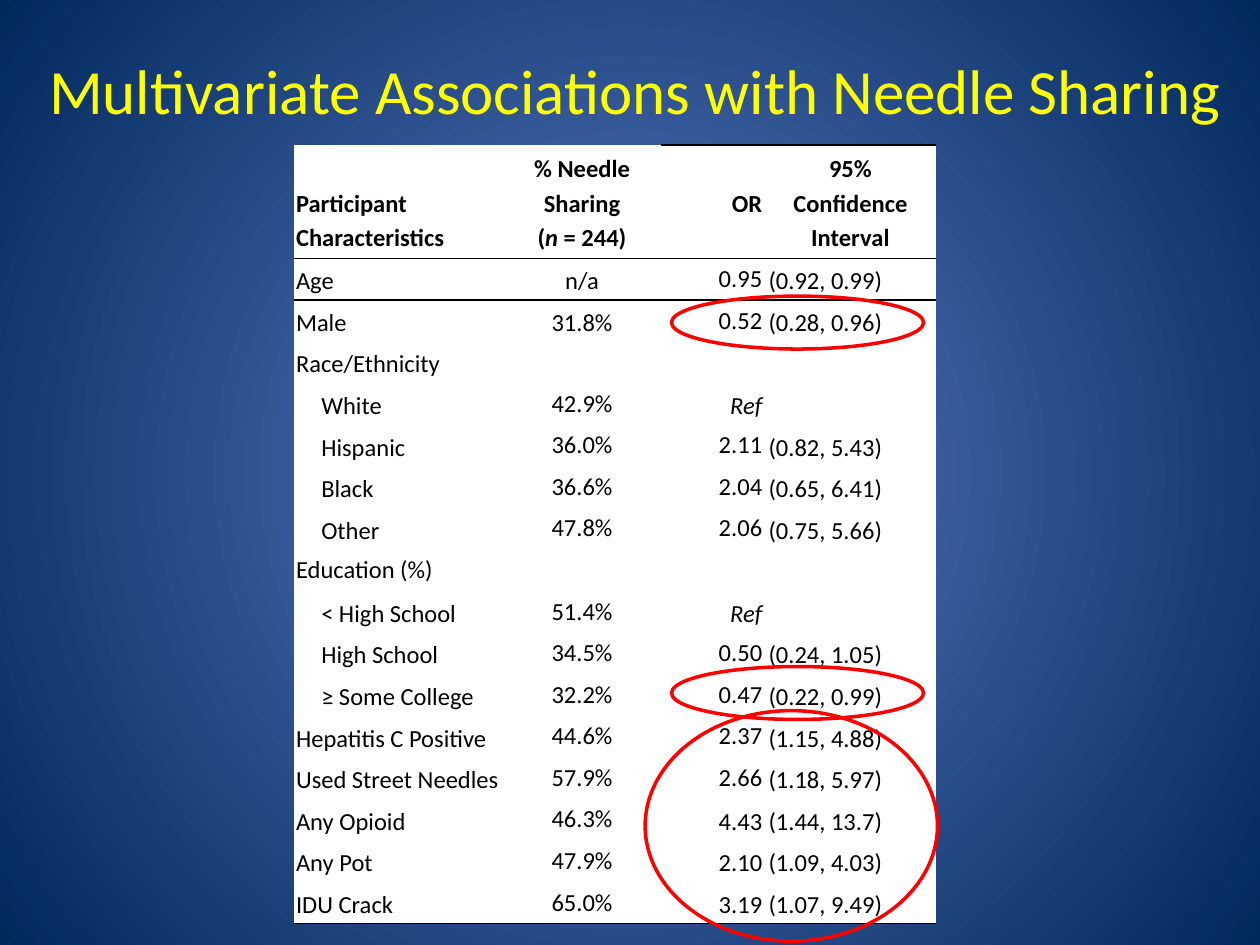
from lxml import etree
from pptx import Presentation
from pptx.dml.color import RGBColor
from pptx.enum.shapes import MSO_SHAPE as Shape
from pptx.enum.text import MSO_ANCHOR as Anchor, PP_ALIGN as Align
from pptx.oxml import parse_xml
from pptx.oxml.ns import nsdecls, qn
from pptx.util import Inches, Pt

FONT = "Calibri"
PLAIN = "{2D5ABB26-0587-4C30-8999-92F81FD0307C}"
COLS = [1.67, 1.25, 0.83, 1.35]
ALIGNS = [Align.LEFT, Align.CENTER, Align.RIGHT, Align.LEFT]
HEAD = ["Participant\nCharacteristics", "% Needle Sharing\n(*n* = 244)",
        "OR", "95%\nConfidence Interval"]
ROWS = [
    ["Age", "n/a", "0.95", "(0.92, 0.99)"],
    ["Male", "31.8%", "0.52", "(0.28, 0.96)"],
    ["Race/Ethnicity", "", "", ""],
    ["White", "42.9%", "*Ref*", ""],
    ["Hispanic", "36.0%", "2.11", "(0.82, 5.43)"],
    ["Black", "36.6%", "2.04", "(0.65, 6.41)"],
    ["Other", "47.8%", "2.06", "(0.75, 5.66)"],
    ["Education (%)", "", "", ""],
    ["< High School", "51.4%", "*Ref*", ""],
    ["High School", "34.5%", "0.50", "(0.24, 1.05)"],
    ["≥ Some College", "32.2%", "0.47", "(0.22, 0.99)"],
    ["Hepatitis C Positive", "44.6%", "2.37", "(1.15, 4.88)"],
    ["Used Street Needles", "57.9%", "2.66", "(1.18, 5.97)"],
    ["Any Opioid", "46.3%", "4.43", "(1.44, 13.7)"],
    ["Any Pot", "47.9%", "2.10", "(1.09, 4.03)"],
    ["IDU Crack", "65.0%", "3.19", "(1.07, 9.49)"],
]
NESTED = {4, 5, 6, 7, 9, 10, 11}


def tint(code):
    return RGBColor.from_string(code)


def add_run(para, text, size, color, bold=False, italic=False):
    run = para.add_run()
    run.text = text
    font = run.font
    font.name, font.size = FONT, Pt(size)
    font.bold, font.italic = bold, italic
    font.color.rgb = tint(color)


def add_backdrop(slide):
    fill = slide.background.fill
    fill.gradient()
    for stop, code in zip(fill.gradient_stops, ["5E7CC5", "00295C"]):
        stop.color.rgb = tint(code)
    grad = slide.element.find(".//" + qn("a:gradFill"))
    grad.remove(grad.find(qn("a:lin")))
    ring = etree.SubElement(grad, qn("a:path"), path="circle")
    etree.SubElement(ring, qn("a:fillToRect"),
                     dict.fromkeys("ltrb", "50000"))


def add_title(slide, box, text):
    frame = slide.shapes.add_textbox(*map(Inches, box)).text_frame
    frame.word_wrap = True
    frame.vertical_anchor = Anchor.MIDDLE
    para = frame.paragraphs[0]
    para.alignment = Align.CENTER
    add_run(para, text, 36, "FFFF00")


def add_edge(cell, side):
    cell._tc.get_or_add_tcPr().insert(0, parse_xml(
        f'<a:ln{side} {nsdecls("a")} w="12700"><a:solidFill>'
        f'<a:srgbClr val="000000"/></a:solidFill></a:ln{side}>'))


def is_tight(row, col, text):
    return (text == "Education (%)" or col == 1 and row > 3
            or col == 2 and 0 < row < 14 and text != "*Ref*")


def fill_cell(cell, row, col, text):
    cell.fill.solid()
    cell.fill.fore_color.rgb = tint("FFFFFF")
    cell.vertical_anchor = Anchor.MIDDLE
    cell.margin_left, cell.margin_right = Inches(0.02), Inches(0.03)
    cell.margin_top = cell.margin_bottom = Inches(0.02 if text else 0)
    if row == 0 and col == 0:
        cell.margin_top = Inches(0.29)
    if row in (0, len(ROWS)):
        add_edge(cell, "B")
    if row == 1 or row == 0 and col > 1:
        add_edge(cell, "T")
    if not text:
        return
    frame = cell.text_frame
    for i, line in enumerate(text.split("\n")):
        para = frame.add_paragraph() if i else frame.paragraphs[0]
        para.alignment = Align.CENTER if row == 0 and col == 3 else ALIGNS[col]
        para.line_spacing = 1.0 if is_tight(row, col, text) else 1.15
        if col == 0 and row in NESTED:
            para._p.get_or_add_pPr().set("marL", str(Inches(0.2)))
        for j, part in enumerate(line.split("*")):
            if part:
                add_run(para, part, 14, "000000", row == 0, j % 2 == 1)


def add_grid(slide, box):
    data = [HEAD] + ROWS
    table = slide.shapes.add_table(
        len(data), len(COLS), *map(Inches, box)).table
    table.first_row = table.horz_banding = False
    table._tbl.tblPr.find(qn("a:tableStyleId")).text = PLAIN
    for col, width in zip(table.columns, COLS):
        col.width = Inches(width)
    for r, texts in enumerate(data):
        table.rows[r].height = Inches(0.33 if r else 0.9)
        for c, text in enumerate(texts):
            fill_cell(table.cell(r, c), r, c, text)


def add_ring(shapes, box):
    ring = shapes.add_shape(Shape.OVAL, *map(Inches, box))
    ring.shadow.inherit = False
    ring.fill.background()
    ring.line.color.rgb = tint("FF0000")
    ring.line.width = Pt(2)


def add_rings(slide):
    pair = slide.shapes.add_group_shape().shapes
    for top in (2.35, 5.29):
        add_ring(pair, (5.33, top, 2, 0.42))
    add_ring(slide.shapes, (5.12, 5.64, 2.32, 1.83))


def main():
    deck = Presentation()
    deck.slide_width, deck.slide_height = Inches(10), Inches(7.5)
    slide = deck.slides.add_slide(deck.slide_layouts[6])
    add_backdrop(slide)
    add_title(slide, (0.25, 0.08, 9.58, 1.25),
              "Multivariate Associations with Needle Sharing")
    add_grid(slide, (2.33, 1.15, 5.1, 6.18))
    add_rings(slide)
    deck.save("out.pptx")


if __name__ == "__main__":
    main()
